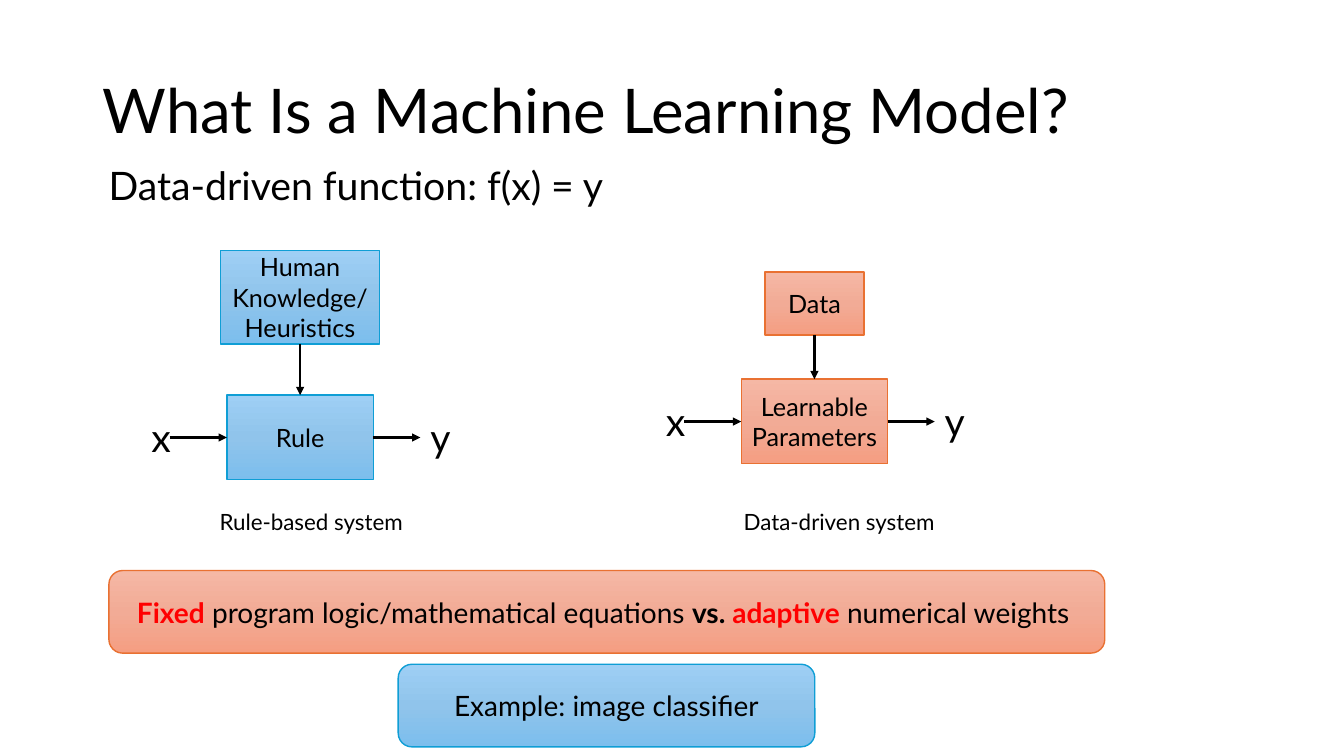
from copy import deepcopy

from lxml.etree import SubElement
from pptx import Presentation
from pptx.dml.color import RGBColor
from pptx.enum.shapes import MSO_CONNECTOR, MSO_SHAPE
from pptx.enum.text import MSO_ANCHOR, PP_ALIGN
from pptx.oxml.ns import qn
from pptx.util import Inches, Pt

SLIDE_WIDTH = Inches(13.33)
SLIDE_HEIGHT = Inches(7.5)
FONT = "Lato"
BLACK = RGBColor(0x00, 0x00, 0x00)
RED = RGBColor(0xFF, 0x00, 0x00)
BLUE_LINE = RGBColor(0x0F, 0x9E, 0xD5)
BLUE_TOP = RGBColor(0x9E, 0xCF, 0xF5)
BLUE_MIDDLE = RGBColor(0x90, 0xC4, 0xEB)
BLUE_BOTTOM = RGBColor(0x7C, 0xBE, 0xED)
ORANGE_LINE = RGBColor(0xE9, 0x71, 0x32)
ORANGE_TOP = RGBColor(0xF5, 0xB8, 0xA5)
ORANGE_MIDDLE = RGBColor(0xF2, 0xAB, 0x96)
ORANGE_BOTTOM = RGBColor(0xF5, 0x9E, 0x82)
BLUE = (BLUE_LINE, (BLUE_TOP, BLUE_MIDDLE, BLUE_BOTTOM))
ORANGE = (ORANGE_LINE, (ORANGE_TOP, ORANGE_MIDDLE, ORANGE_BOTTOM))

MODEL_WIDTH, MODEL_HEIGHT = 10.9, 11.2
VARIABLE_WIDTH, VARIABLE_HEIGHT = 4.2, 7.6
INPUT_LEFT, INPUT_ARROW, OUTPUT_LEFT = -11.8, -9.7, 8.95
BANNER_HEIGHT = 10.93


def across(percent):
    return round(SLIDE_WIDTH * percent / 100)


def down(percent):
    return round(SLIDE_HEIGHT * percent / 100)


def place(left, top, width, height):
    return across(left), down(top), across(width), down(height)


def style(paragraph, size):
    paragraph.font.name = FONT
    paragraph.font.size = Pt(size)
    paragraph.font.color.rgb = BLACK


def add_label(slide, area, text, size, anchor=MSO_ANCHOR.TOP, spacing=1.0):
    frame = slide.shapes.add_textbox(*place(*area)).text_frame
    frame.word_wrap = True
    frame.vertical_anchor = anchor
    frame.text = text
    style(frame.paragraphs[0], size)
    frame.paragraphs[0].line_spacing = spacing


def add_box(slide, area, palette, lines, size, preset=MSO_SHAPE.RECTANGLE):
    outline, shades = palette
    box = slide.shapes.add_shape(preset, *place(*area))
    box.shadow.inherit = False
    box.line.color.rgb = outline
    box.line.width = Pt(1)
    box.fill.gradient()
    box.fill.gradient_angle = 270
    stops = box._element.spPr.find(qn("a:gradFill")).find(qn("a:gsLst"))
    stops.insert(1, deepcopy(stops[0]))
    for stop, position, shade in zip(box.fill.gradient_stops, (0, 0.5, 1), shades):
        stop.position = position
        stop.color.rgb = shade
    frame = box.text_frame
    frame.word_wrap = True
    frame.vertical_anchor = MSO_ANCHOR.MIDDLE
    frame.text = lines
    for paragraph in frame.paragraphs:
        paragraph.alignment = PP_ALIGN.CENTER
        style(paragraph, size)
    return frame.paragraphs[0]


def add_arrow(slide, start, end):
    arrow = slide.shapes.add_connector(
        MSO_CONNECTOR.STRAIGHT,
        across(start[0]), down(start[1]), across(end[0]), down(end[1]),
    )
    arrow.line.color.rgb = BLACK
    arrow.line.width = Pt(1.5)
    SubElement(arrow.line._get_or_add_ln(), qn("a:tailEnd"), type="triangle")
    SubElement(arrow._element.spPr, qn("a:effectLst"))


def add_system(slide, center, palette, source, source_size, source_top, model, caption, caption_left):
    x, y = center
    source_width, source_height = source_size
    model_top = y - MODEL_HEIGHT / 2
    model_left, model_right = x - MODEL_WIDTH / 2, x + MODEL_WIDTH / 2
    add_box(slide, (model_left, model_top, MODEL_WIDTH, MODEL_HEIGHT), palette, model, 18)
    add_box(slide, (x - source_width / 2, source_top, source_width, source_height),
            palette, source, 18)
    for variable, offset in (("x", INPUT_LEFT), ("y", OUTPUT_LEFT)):
        add_label(slide, (x + offset, y - VARIABLE_HEIGHT / 2, VARIABLE_WIDTH, VARIABLE_HEIGHT),
                  variable, 28)
    add_arrow(slide, (x + INPUT_ARROW, y), (model_left, y))
    add_arrow(slide, (model_right, y), (x + OUTPUT_LEFT, y))
    add_arrow(slide, (x, source_top + source_height), (x, model_top))
    add_label(slide, (caption_left, 66.6, 22.4, 4.93), caption, 16)


def add_comparison(slide):
    comparison = add_box(slide, (8.1, 75.47, 74.1, BANNER_HEIGHT), ORANGE, "", 20,
                         MSO_SHAPE.ROUNDED_RECTANGLE)
    for words, color, bold in (
        ("Fixed", RED, True),
        (" program logic/mathematical equations ", BLACK, False),
        ("vs. ", BLACK, True),
        ("adaptive", RED, True),
        (" numerical weights ", BLACK, False),
    ):
        run = comparison.add_run()
        run.text = words
        run.font.color.rgb = color
        run.font.bold = bold


def main():
    presentation = Presentation()
    presentation.slide_width = SLIDE_WIDTH
    presentation.slide_height = SLIDE_HEIGHT
    slide = presentation.slides.add_slide(presentation.slide_layouts[6])
    add_label(slide, (6.9, 5.33, 86.25, 19.33), "What Is a Machine Learning Model?", 44,
              MSO_ANCHOR.MIDDLE, 0.9)
    add_label(slide, (7.35, 21.33, 86.25, 63.47), "Data-driven function: f(x) = y", 28,
              spacing=0.9)
    add_system(slide, (22.33, 57.87), BLUE, "Human Knowledge/Heuristics", (11.85, 12.4), 33.1,
               "Rule", "Rule-based system", 15.6)
    add_system(slide, (60.6, 55.76), ORANGE, "Data", (7.35, 8.3), 36,
               "Learnable\nParameters", "Data-driven system", 54.6)
    add_comparison(slide)
    add_box(slide, (29.63, 87.87, 31, BANNER_HEIGHT), BLUE, "Example: image classifier", 20,
            MSO_SHAPE.ROUNDED_RECTANGLE)
    presentation.save("out.pptx")


if __name__ == "__main__":
    main()
